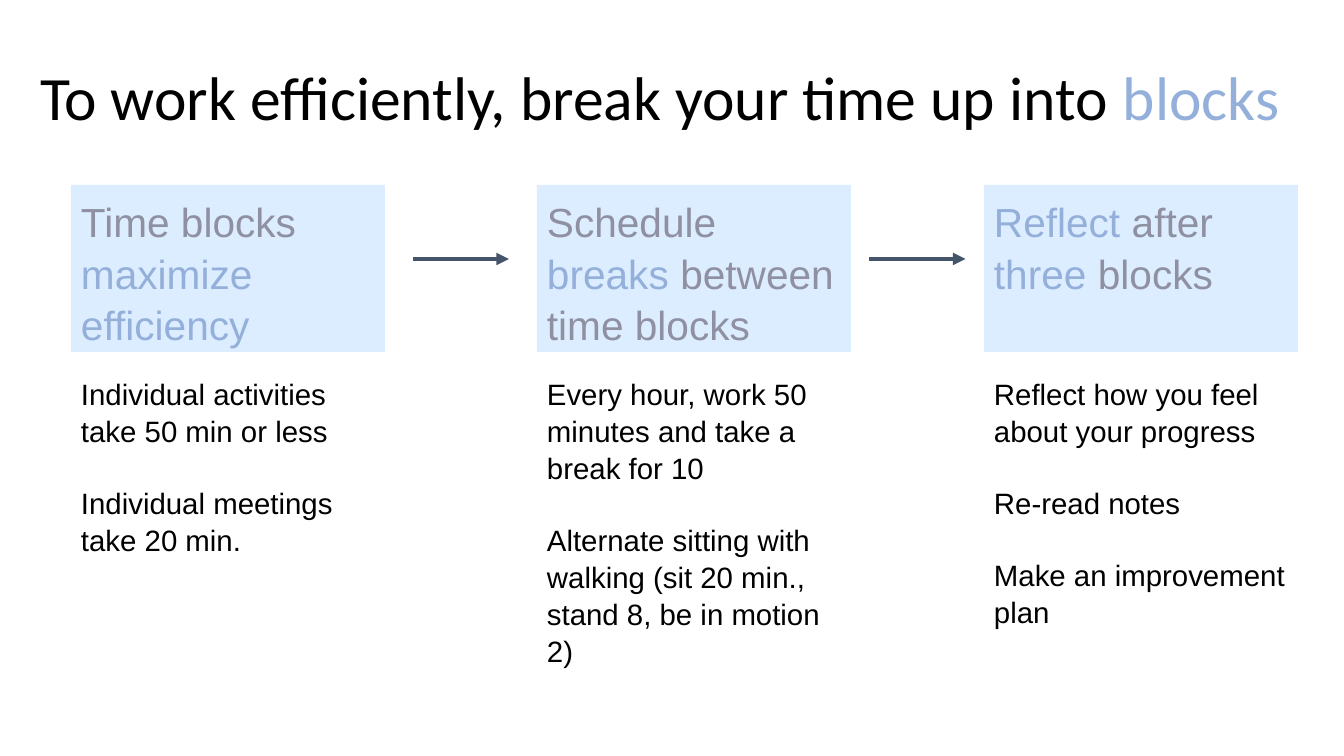
from lxml import etree
from pptx import Presentation
from pptx import util as u
from pptx.dml.color import RGBColor
from pptx.enum import shapes, text
from pptx.oxml.ns import qn

EMU_PER_PX = 914400 / 100.8
BLACK, BLUE, GREY = "000000", "94B0DA", "8F91A2"
PANEL, ARROW = "DCEDFF", "44546A"

COLUMN_LEFTS = [71, 537, 984]
COLUMN_WIDTH = 314
HEADING_TOP, HEADING_HEIGHT = 185, 167
DETAILS_TOP, DETAILS_HEIGHT = 364, 135
ARROW_Y, ARROW_LENGTH = 259, 96

TITLE = [("To work efficiently, break your time up into ", BLACK), ("blocks", BLUE)]
# Each step: heading paragraphs made of coloured runs, then its details
STEPS = [
    ([[("Time blocks", GREY)], [("maximize", BLUE)], [("efficiency", BLUE)]],
     ["Individual activities take 50 min or less",
      "Individual meetings take 20 min."]),
    ([[("Schedule ", GREY), ("breaks ", BLUE), ("between time blocks", GREY)]],
     ["Every hour, work 50 minutes and take a break for 10",
      "Alternate sitting with walking (sit 20 min., stand 8, be in motion 2)"]),
    ([[("Reflect", BLUE), (" after ", GREY), ("three", BLUE), (" blocks", GREY)]],
     ["Reflect how you feel about your progress",
      "Re-read notes",
      "Make an improvement plan"]),
]


def px(length):
    return u.Emu(round(length * EMU_PER_PX))


def color(hex_code):
    return RGBColor.from_string(hex_code)


def write(shape, paragraphs, font, size, spacing, inset_y=10, gap=0,
          anchor=text.MSO_ANCHOR.TOP):
    """Fill a shape with paragraphs, each a list of (wording, colour) runs."""
    frame = shape.text_frame
    frame.word_wrap = True
    frame.vertical_anchor = anchor
    frame.margin_left = frame.margin_right = px(10)
    frame.margin_top = frame.margin_bottom = px(inset_y)
    for index, runs in enumerate(paragraphs):
        paragraph = frame.add_paragraph() if index else frame.paragraphs[0]
        paragraph.alignment = text.PP_ALIGN.LEFT
        paragraph.line_spacing = spacing
        if index:
            paragraph.space_before = u.Pt(gap)
        for wording, hex_code in runs:
            run = paragraph.add_run()
            run.text = wording
            run.font.name = font
            run.font.size = u.Pt(size)
            run.font.color.rgb = color(hex_code)


def add_title(slide, left, top, width, height):
    title = slide.shapes.add_textbox(px(left), px(top), px(width), px(height))
    write(title, [TITLE], "Calibri", 44, 0.9, inset_y=5,
          anchor=text.MSO_ANCHOR.MIDDLE)


def add_step(slide, left, width, heading, details):
    panel = slide.shapes.add_shape(
        shapes.MSO_SHAPE.RECTANGLE,
        px(left), px(HEADING_TOP), px(width), px(HEADING_HEIGHT))
    panel.shadow.inherit = False
    panel.fill.solid()
    panel.fill.fore_color.rgb = color(PANEL)
    panel.line.fill.background()
    write(panel, heading, "Arial", 29, 1.05)

    notes = slide.shapes.add_textbox(
        px(left), px(DETAILS_TOP), px(width), px(DETAILS_HEIGHT))
    write(notes, [[(detail, BLACK)] for detail in details], "Arial", 21, 1.05,
          gap=25)


def add_arrow(slide, gap_left, gap_right):
    """Draw an arrow centred in the gap between two steps."""
    start = (gap_left + gap_right - ARROW_LENGTH) / 2
    arrow = slide.shapes.add_connector(
        shapes.MSO_CONNECTOR.STRAIGHT,
        px(start), px(ARROW_Y), px(start + ARROW_LENGTH), px(ARROW_Y))
    arrow.line.color.rgb = color(ARROW)
    arrow.line.width = u.Pt(3)
    properties = arrow._element.spPr
    head = etree.SubElement(properties.find(qn("a:ln")), qn("a:tailEnd"))
    head.set("type", "triangle")
    etree.SubElement(properties, qn("a:effectLst"))


def main():
    deck = Presentation()
    deck.slide_width, deck.slide_height = px(1344), px(756)
    slide = deck.slides.add_slide(deck.slide_layouts[6])
    add_title(slide, 30, 28, 1301, 146)
    for left, (heading, details) in zip(COLUMN_LEFTS, STEPS):
        add_step(slide, left, COLUMN_WIDTH, heading, details)
    for left, following in zip(COLUMN_LEFTS, COLUMN_LEFTS[1:]):
        add_arrow(slide, left + COLUMN_WIDTH, following)
    deck.save("out.pptx")


if __name__ == "__main__":
    main()
